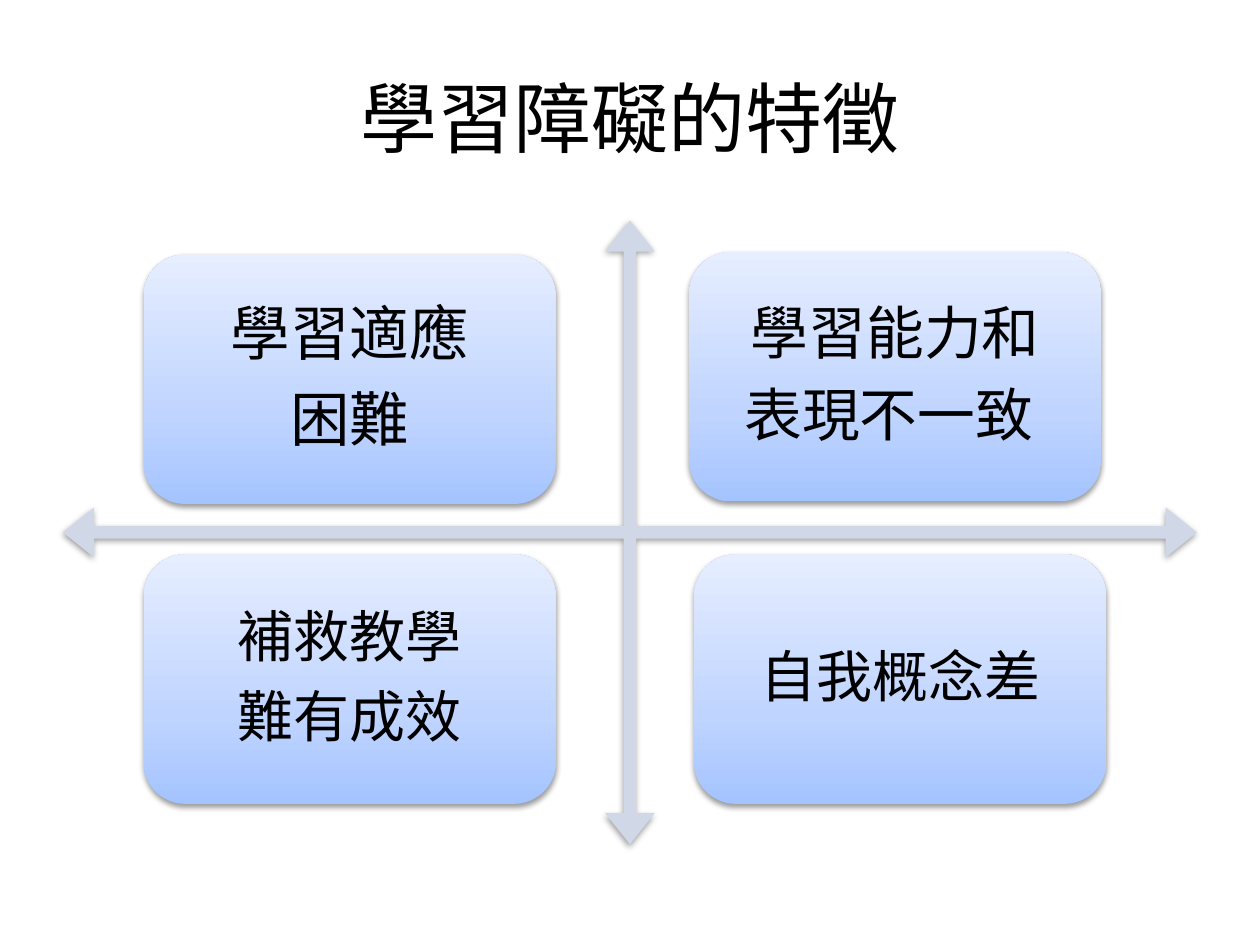
import copy

from pptx import Presentation
from pptx import util as u
from pptx.dml import color
from pptx.enum import shapes, text
from pptx.oxml import ns, parse_xml


def rgb(value):
    return color.RGBColor.from_string(value)


class QuadrantSlide:
    """Holds the style of the quadrant diagram and the slide it is drawn on."""

    ink = "000000"
    arrow_fill = "D0D8E8"
    card_stops = ((0, "A4C4FF"), (0.35, "BFD4FF"), (1, "E6EEFF"))
    title_font = "Noto Sans CJK SC"
    body_font = "Calibri"
    card_size = (3.27, 1.98)

    def __init__(self, slide):
        self.slide = slide

    def set_font(self, paragraph, name, size):
        paragraph.alignment = text.PP_ALIGN.CENTER
        paragraph.font.name = name
        paragraph.font.size = u.Pt(size)
        paragraph.font.color.rgb = rgb(self.ink)

    def title(self, wording, left, top, width, height):
        title = self.slide.shapes.title
        title.left, title.top = u.Inches(left), u.Inches(top)
        title.width, title.height = u.Inches(width), u.Inches(height)
        title.text_frame.text = wording
        title.text_frame.vertical_anchor = text.MSO_ANCHOR.MIDDLE
        self.set_font(title.text_frame.paragraphs[0], self.title_font, 44)

    def raised_shape(self, kind, left, top, width, height):
        shape = self.slide.shapes.add_shape(
            kind, u.Inches(left), u.Inches(top), u.Inches(width), u.Inches(height))
        shape.line.fill.background()
        shape.shadow.inherit = False
        effects = shape._element.spPr.find(ns.qn("a:effectLst"))
        effects.append(parse_xml(
            f'<a:outerShdw {ns.nsdecls("a")} blurRad="{u.Pt(3.1)}" dist="{u.Pt(1.6)}" '
            'dir="5400000" rotWithShape="0"><a:srgbClr val="000000">'
            '<a:alpha val="38000"/></a:srgbClr></a:outerShdw>'))
        return shape

    def axes(self, left, top, width, height):
        axes = self.raised_shape(shapes.MSO_SHAPE.QUAD_ARROW, left, top, width, height)
        for index, value in enumerate((0.02, 0.04, 0.05)):
            axes.adjustments[index] = value
        axes.fill.solid()
        axes.fill.fore_color.rgb = rgb(self.arrow_fill)

    def shade(self, card):
        card.fill.gradient()
        card.fill.gradient_angle = 90
        stop_list = card._element.spPr.find(".//" + ns.qn("a:gsLst"))
        stop_list.insert(1, copy.deepcopy(stop_list[0]))
        for stop, (position, shade) in zip(card.fill.gradient_stops, self.card_stops):
            stop.position = position
            stop.color.rgb = rgb(shade)

    def space_after_percent(self, paragraph, percent):
        paragraph.space_after = u.Pt(0)
        spacing = paragraph._p.pPr.find(ns.qn("a:spcAft"))
        spacing.remove(spacing[0])
        spacing.append(parse_xml(
            f'<a:spcPct {ns.nsdecls("a")} val="{percent * 1000}"/>'))

    def card(self, lines, left, top, size, inset):
        card = self.raised_shape(
            shapes.MSO_SHAPE.ROUNDED_RECTANGLE, left, top, *self.card_size)
        self.shade(card)
        frame = card.text_frame
        frame.word_wrap = True
        frame.vertical_anchor = text.MSO_ANCHOR.MIDDLE
        frame.margin_left = frame.margin_right = u.Inches(inset)
        frame.margin_top = frame.margin_bottom = u.Inches(inset)
        frame.text = "\n".join(lines)
        for paragraph in frame.paragraphs:
            paragraph.line_spacing = 0.9
            self.space_after_percent(paragraph, 35)
            self.set_font(paragraph, self.body_font, size)


def main():
    deck = Presentation()
    deck.slide_width, deck.slide_height = u.Inches(10), u.Inches(7.5)
    diagram = QuadrantSlide(deck.slides.add_slide(deck.slide_layouts[5]))
    diagram.title("學習障礙的特徵", 0.5, 0.3, 9, 1.25)
    diagram.axes(0.5, 1.75, 9, 4.95)
    features = (
        (("學習適應", "困難"), 1.14, 2.02, 34, 0.14),
        (("學習能力和", "表現不一致 "), 5.47, 2, 33, 0.14),
        (("補救教學", "難有成效"), 1.14, 4.4, 32, 0.13),
        (("自我概念差",), 5.51, 4.4, 32, 0.13),
    )
    for feature in features:
        diagram.card(*feature)
    deck.save("out.pptx")


if __name__ == "__main__":
    main()
